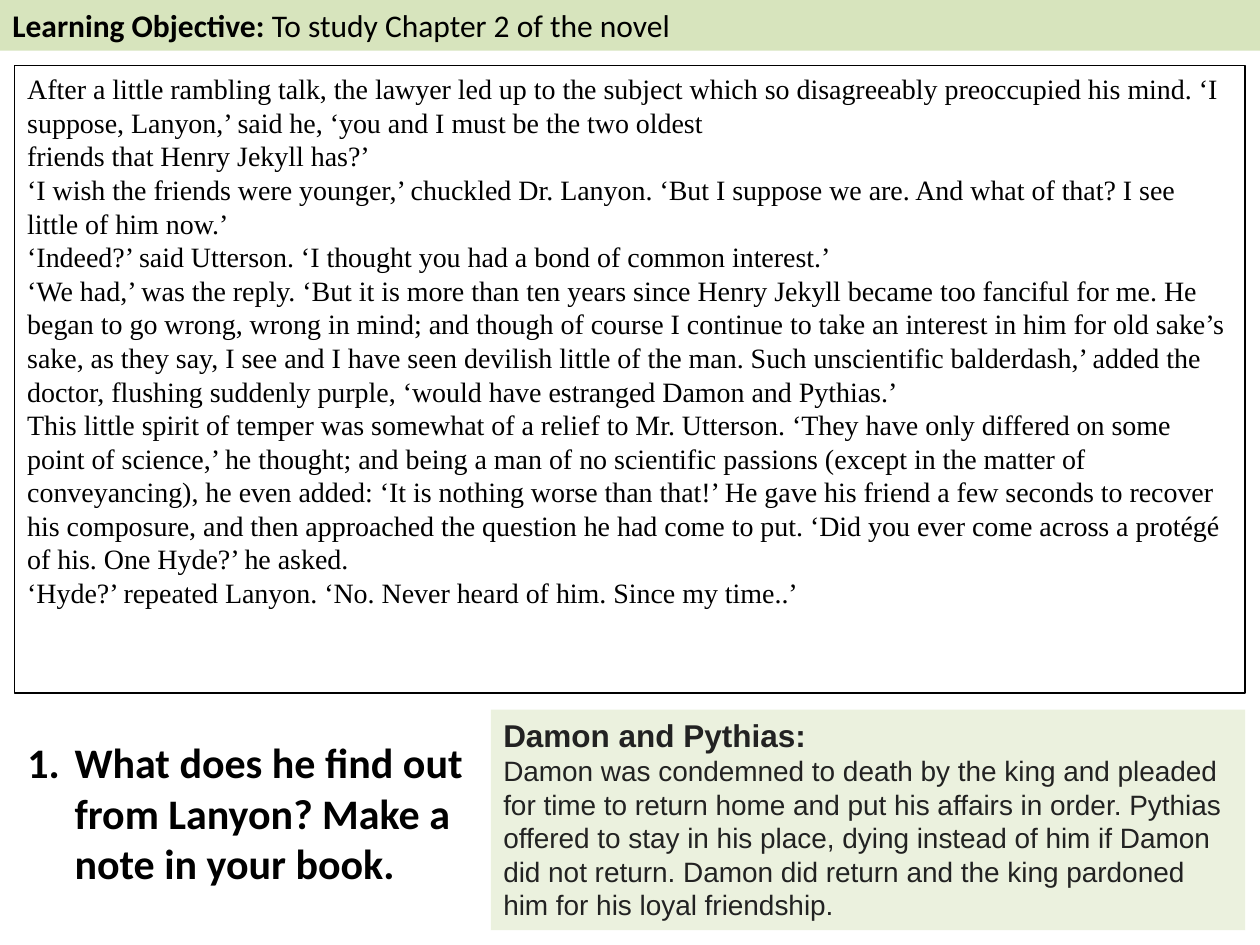
"""Build the Chapter 2 study slide with its excerpt, question and glossary note."""
from lxml.etree import SubElement
from pptx import Presentation
from pptx.dml.color import RGBColor
from pptx.enum.text import MSO_ANCHOR
from pptx.oxml.ns import qn
from pptx.util import Pt

BLACK = RGBColor(0x00, 0x00, 0x00)
CHARCOAL = RGBColor(0x22, 0x22, 0x22)
HEADER_GREEN = RGBColor(0xD7, 0xE4, 0xBD)
NOTE_GREEN = RGBColor(0xEB, 0xF1, 0xDE)

EXCERPT = [
    "After a little rambling talk, the lawyer led up to the subject which so "
    "disagreeably preoccupied his mind. ‘I suppose, Lanyon,’ said he, ‘you and I "
    "must be the two oldest",
    "friends that Henry Jekyll has?’",
    "‘I wish the friends were younger,’ chuckled Dr. Lanyon. ‘But I suppose we are. "
    "And what of that? I see little of him now.’",
    "‘Indeed?’ said Utterson. ‘I thought you had a bond of common interest.’",
    "‘We had,’ was the reply. ‘But it is more than ten years since Henry Jekyll "
    "became too fanciful for me. He began to go wrong, wrong in mind; and though of "
    "course I continue to take an interest in him for old sake’s sake, as they say, "
    "I see and I have seen devilish little of the man. Such unscientific "
    "balderdash,’ added the doctor, flushing suddenly purple, ‘would have estranged "
    "Damon and Pythias.’",
    "This little spirit of temper was somewhat of a relief to Mr. Utterson. ‘They "
    "have only differed on some point of science,’ he thought; and being a man of no "
    "scientific passions (except in the matter of conveyancing), he even added: ‘It "
    "is nothing worse than that!’ He gave his friend a few seconds to recover his "
    "composure, and then approached the question he had come to put. ‘Did you ever "
    "come across a protégé",
    "of his. One Hyde?’ he asked.",
    "‘Hyde?’ repeated Lanyon. ‘No. Never heard of him. Since my time..’",
]
QUESTION = "What does he find out from Lanyon? Make a note in your book."
NOTE_TITLE = "Damon and Pythias:"
NOTE = (
    "Damon was condemned to death by the king and pleaded for time to return home "
    "and put his affairs in order. Pythias offered to stay in his place, dying "
    "instead of him if Damon did not return. Damon did return and the king pardoned "
    "him for his loyal friendship."
)


def add_panel(slide, left, top, width, height, fill=None, outline=None):
    """Add a wrapping text panel with an optional fill and outline."""
    panel = slide.shapes.add_textbox(Pt(left), Pt(top), Pt(width), Pt(height))
    panel.text_frame.word_wrap = True
    panel.text_frame.vertical_anchor = MSO_ANCHOR.TOP
    if fill is not None:
        panel.fill.solid()
        panel.fill.fore_color.rgb = fill
    if outline is not None:
        panel.line.color.rgb = outline
        panel.line.width = Pt(0.75)
    return panel.text_frame


def format_run(run, font_name, size, color=BLACK, bold=False):
    """Set the typeface, size, colour and weight of a run."""
    run.font.name = font_name
    run.font.size = Pt(size)
    run.font.color.rgb = color
    run.font.bold = bold


def number_paragraph(paragraph, indent):
    """Give a paragraph automatic numbering with a hanging indent."""
    properties = paragraph._p.get_or_add_pPr()
    properties.set("marL", str(Pt(indent)))
    properties.set("indent", str(-Pt(indent)))
    SubElement(properties, qn("a:buFont"), typeface="+mj-lt")
    SubElement(properties, qn("a:buAutoNum"), type="arabicPeriod")


def add_header(slide):
    """Add the learning objective banner."""
    paragraph = add_panel(slide, 0, 0, 720, 29, fill=HEADER_GREEN).paragraphs[0]
    paragraph.text = "Learning Objective: "
    paragraph.add_run().text = "To study Chapter 2 of the novel"
    for run, bold in zip(paragraph.runs, (True, False)):
        format_run(run, "Calibri", 18, bold=bold)


def add_excerpt(slide):
    """Add the outlined passage from the novel."""
    text_frame = add_panel(slide, 8.5, 37.5, 703, 358.5, outline=BLACK)
    text_frame.text = "\n".join(EXCERPT)
    for paragraph in text_frame.paragraphs:
        format_run(paragraph.runs[0], "Times New Roman", 16)


def add_question(slide):
    """Add the numbered question."""
    text_frame = add_panel(slide, 8.5, 417.5, 300, 94.5)
    text_frame.text = QUESTION
    paragraph = text_frame.paragraphs[0]
    number_paragraph(paragraph, 27)
    format_run(paragraph.runs[0], "Calibri", 24, bold=True)


def add_note(slide):
    """Add the shaded explanation of Damon and Pythias."""
    text_frame = add_panel(slide, 280.5, 405.5, 431, 126, fill=NOTE_GREEN)
    text_frame.text = f"{NOTE_TITLE}\n{NOTE}"
    title, body = text_frame.paragraphs
    format_run(title.runs[0], "Arial", 18, CHARCOAL, bold=True)
    format_run(body.runs[0], "Arial", 16, CHARCOAL)


def main():
    """Create the presentation and save it."""
    presentation = Presentation()
    presentation.slide_width = Pt(720)
    presentation.slide_height = Pt(540)
    slide = presentation.slides.add_slide(presentation.slide_layouts[6])
    add_header(slide)
    add_excerpt(slide)
    add_question(slide)
    add_note(slide)
    presentation.save("out.pptx")


if __name__ == "__main__":
    main()
